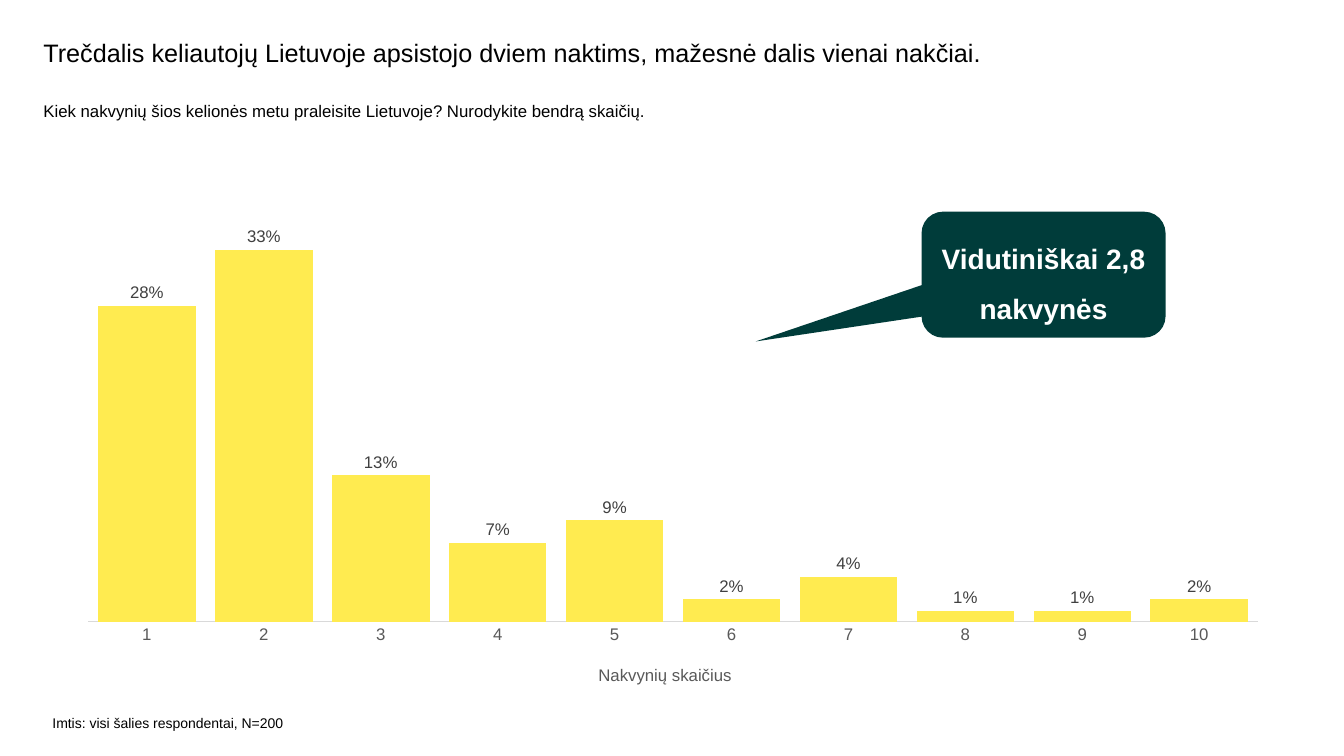
from lxml import etree
from pptx import Presentation
from pptx.chart.data import CategoryChartData
from pptx.dml.color import RGBColor
from pptx.enum.chart import XL_CHART_TYPE, XL_LABEL_POSITION, XL_TICK_MARK
from pptx.enum.shapes import MSO_SHAPE
from pptx.enum.text import MSO_ANCHOR, MSO_AUTO_SIZE, PP_ALIGN
from pptx.oxml.ns import qn
from pptx.util import Inches, Pt

COLUMNS = XL_CHART_TYPE.COLUMN_CLUSTERED
OUTSIDE_END = XL_LABEL_POSITION.OUTSIDE_END
NO_TICK = XL_TICK_MARK.NONE
CALLOUT = MSO_SHAPE.ROUNDED_RECTANGULAR_CALLOUT
TOP, MIDDLE = MSO_ANCHOR.TOP, MSO_ANCHOR.MIDDLE
LEFT, CENTER = PP_ALIGN.LEFT, PP_ALIGN.CENTER

# Content
TITLE = "Trečdalis keliautojų Lietuvoje apsistojo dviem naktims, mažesnė dalis vienai nakčiai."
QUESTION = "Kiek nakvynių šios kelionės metu praleisite Lietuvoje? Nurodykite bendrą skaičių."
SAMPLE = "Imtis: visi šalies respondentai, N=200"
AVERAGE = "Vidutiniškai 2,8 nakvynės"
NIGHTS_LABEL = "Nakvynių skaičius"
SHARES = [0.28, 0.33, 0.13, 0.07, 0.09, 0.02, 0.04, 0.01, 0.01, 0.02]

# Theme
THEME = {
    "font": "Arial",
    "text": "000000", "on_dark": "FFFFFF", "label": "404040", "axis": "595959",
    "axis_line": "D9D9D9", "column": "FFEB50", "callout": "003C3A",
    "title_size": 18, "body_size": 12, "note_size": 10, "callout_size": 20,
}

# Positions: left, top, width, height in inches
TITLE_BOX = (0.43, 0.4, 11.25, 0.6)
QUESTION_BOX = (0.43, 1, 11.89, 0.61)
SAMPLE_BOX = (0.52, 7.09, 2.53, 0.24)
CHART_BOX = (0.47, 1.98, 12.35, 5.36)
CALLOUT_BOX = (9.14, 2.1, 2.42, 1.25)


def color(name):
    return RGBColor.from_string(THEME[name])


def set_font(font, size, color_name, bold=False):
    values = {"name": THEME["font"], "size": Pt(THEME[size]), "bold": bold}
    for attribute, value in values.items():
        setattr(font, attribute, value)
    font.color.rgb = color(color_name)


def write(shape, text, size, color_name="text", bold=False, align=LEFT,
          anchor=TOP, spacing=1.0, insets=(0, 0)):
    frame = shape.text_frame
    horizontal, vertical = (Inches(inset) for inset in insets)
    values = {
        "text": text, "word_wrap": True, "auto_size": MSO_AUTO_SIZE.NONE,
        "vertical_anchor": anchor,
        "margin_left": horizontal, "margin_right": horizontal,
        "margin_top": vertical, "margin_bottom": vertical,
    }
    for attribute, value in values.items():
        setattr(frame, attribute, value)
    paragraph = frame.paragraphs[0]
    paragraph.alignment = align
    paragraph.line_spacing = spacing
    set_font(paragraph.runs[0].font, size, color_name, bold)


def set_layout(parent, index, settings):
    """Fix the place of a chart part, in fractions of the chart."""
    layout = parent.find(qn("c:layout"))
    if layout is not None:
        parent.remove(layout)
    layout = etree.Element(qn("c:layout"))
    manual = etree.SubElement(layout, qn("c:manualLayout"))
    for tag, value in settings.items():
        etree.SubElement(manual, qn("c:" + tag)).set("val", str(value))
    parent.insert(index, layout)


def add_nights_chart(slide):
    data = CategoryChartData(number_format="0%")
    data.categories = [str(night) for night in range(1, len(SHARES) + 1)]
    data.add_series("Series 1", SHARES)
    chart = slide.shapes.add_chart(COLUMNS, *map(Inches, CHART_BOX), data).chart
    chart.has_legend = False
    set_font(chart.font, "note_size", "text")

    # Columns and their labels
    plot = chart.plots[0]
    plot.gap_width, plot.overlap, plot.vary_by_categories = 20, -27, False
    fill = plot.series[0].format.fill
    fill.solid()
    fill.fore_color.rgb = color("column")
    plot.has_data_labels = True
    labels = plot.data_labels
    label_values = {"show_value": True, "position": OUTSIDE_END,
                    "number_format": "0%", "number_format_is_linked": False}
    for attribute, value in label_values.items():
        setattr(labels, attribute, value)
    set_font(labels.font, "body_size", "label")

    # Axes
    category_axis, value_axis = chart.category_axis, chart.value_axis
    category_axis.major_tick_mark = NO_TICK
    category_axis.format.line.color.rgb = color("axis_line")
    category_axis.format.line.width = Pt(0.75)
    set_font(category_axis.tick_labels.font, "body_size", "axis")
    axis_values = {"minimum_scale": 0, "maximum_scale": 0.35,
                   "has_major_gridlines": False, "visible": False}
    for attribute, value in axis_values.items():
        setattr(value_axis, attribute, value)

    # Chart title placed under the columns
    title = chart.chart_title
    title.text_frame.text = NIGHTS_LABEL
    set_font(title.text_frame.paragraphs[0].runs[0].font, "body_size", "axis")
    title_element = chart._chartSpace.chart.find(qn("c:title"))
    set_layout(title_element, 1,
               {"xMode": "edge", "yMode": "edge", "x": 0.44, "y": 0.855})
    set_layout(chart._chartSpace.chart.plotArea, 0,
               {"layoutTarget": "inner", "xMode": "edge", "yMode": "edge",
                "x": 0.033, "y": 0.051, "w": 0.939, "h": 0.731})


def add_average_callout(slide):
    callout = slide.shapes.add_shape(CALLOUT, *map(Inches, CALLOUT_BOX))
    for index, value in enumerate((-1.18, 0.53, 0.17)):
        callout.adjustments[index] = value
    callout.shadow.inherit = False
    callout.fill.solid()
    callout.fill.fore_color.rgb = color("callout")
    callout.line.fill.background()
    write(callout, AVERAGE, "callout_size", "on_dark", bold=True, align=CENTER,
          anchor=MIDDLE, spacing=1.5, insets=(0.1, 0.05))


def main():
    presentation = Presentation()
    presentation.slide_width, presentation.slide_height = Inches(13.33), Inches(7.5)
    slide = presentation.slides.add_slide(presentation.slide_layouts[5])

    # Title, question and sample note
    title = slide.shapes.title
    for attribute, value in zip(("left", "top", "width", "height"), TITLE_BOX):
        setattr(title, attribute, Inches(value))
    write(title, TITLE, "title_size", spacing=0.9)
    for text, box, size in ((QUESTION, QUESTION_BOX, "body_size"),
                            (SAMPLE, SAMPLE_BOX, "note_size")):
        write(slide.shapes.add_textbox(*map(Inches, box)), text, size)

    add_nights_chart(slide)
    add_average_callout(slide)
    presentation.save("out.pptx")


if __name__ == "__main__":
    main()
